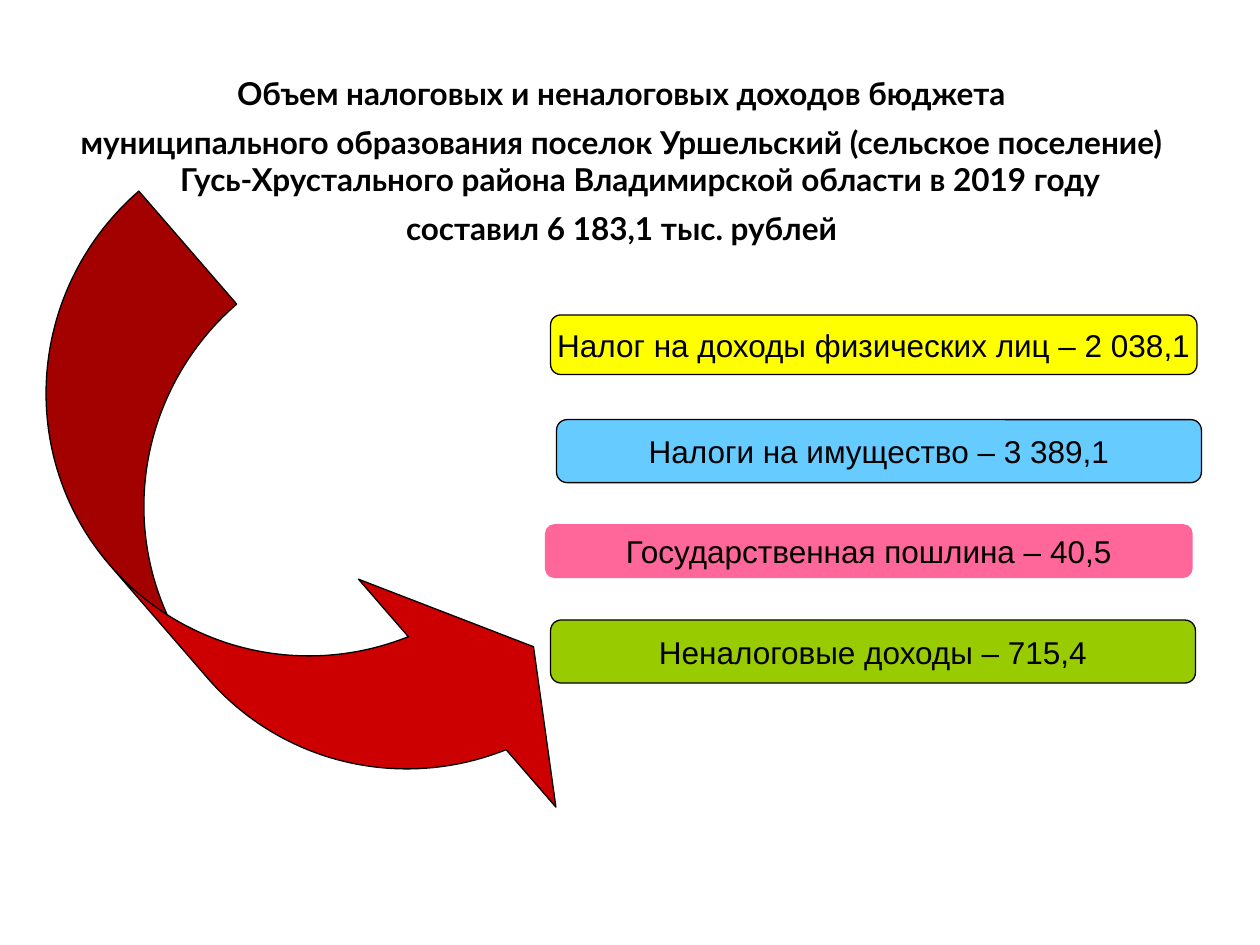
from pptx import Presentation
from pptx.dml.color import RGBColor
from pptx.enum.shapes import MSO_SHAPE
from pptx.enum.text import MSO_ANCHOR, MSO_AUTO_SIZE, PP_ALIGN
from pptx.util import Cm, Pt

CARD = MSO_SHAPE.FLOWCHART_ALTERNATE_PROCESS
ARROW = MSO_SHAPE.CURVED_RIGHT_ARROW
MIDDLE, TOP = MSO_ANCHOR.MIDDLE, MSO_ANCHOR.TOP
CENTER = PP_ALIGN.CENTER
BLACK = "000000"

TITLE = [
    "Объем налоговых и неналоговых доходов бюджета",
    "муниципального образования поселок Уршельский (сельское поселение) "
    "Гусь-Хрустального района Владимирской области в 2019 году",
    "составил 6 183,1 тыс. рублей",
]
# text, fill, line, left, top, width, height (cm)
CARDS = [
    ("Налог на доходы физических лиц – 2 038,1", "FFFF00", BLACK, 11.1, 6.35, 13.03, 1.2),
    ("Налоги на имущество – 3 389,1", "66CCFF", BLACK, 11.22, 8.46, 13, 1.27),
    ("Государственная пошлина – 40,5", "FF6699", "FF6699", 11, 10.58, 13.03, 1.06),
    ("Неналоговые доходы – 715,4", "99CC00", BLACK, 11.1, 12.5, 13, 1.27),
]
ARROW_BOX = (3.05, 3.76, 5.38, 15.19)
ARROW_ADJ = (0.56, 1.13, 0.33)
HANG = Cm(0.75)


def color(code):
    return RGBColor.from_string(code)


def write(par, text, font, bold=False):
    par.alignment = CENTER
    run = par.add_run()
    run.text = text
    run.font.name, run.font.size, run.font.bold = font, Pt(18), bold
    run.font.color.rgb = color(BLACK)


def draw(kind, box, fill, line):
    shape = slide.shapes.add_shape(kind, *map(Cm, box))
    shape.shadow.inherit = False
    shape.fill.solid()
    shape.fill.fore_color.rgb = color(fill)
    shape.line.color.rgb = color(line)
    shape.line.width = Pt(0.75)
    return shape


deck = Presentation()
deck.slide_width, deck.slide_height = Cm(25.4), Cm(19.05)
slide = deck.slides.add_slide(deck.slide_layouts[5])

title = slide.shapes.title
title.left, title.top, title.width, title.height = map(Cm, (0.63, 1.37, 23.8, 3.8))
frame = title.text_frame
frame.auto_size = MSO_AUTO_SIZE.NONE
frame.word_wrap = True
frame.vertical_anchor = TOP
for i, text in enumerate(TITLE):
    par = frame.add_paragraph() if i else frame.paragraphs[0]
    par.space_before = Pt(6 if i else 0)
    props = par._p.get_or_add_pPr()
    props.set("marL", str(HANG))
    props.set("indent", str(-HANG))
    write(par, text, "Lato", True)

for text, fill, line, *box in CARDS:
    frame = draw(CARD, box, fill, line).text_frame
    frame.word_wrap = False
    frame.vertical_anchor = MIDDLE
    write(frame.paragraphs[0], text, "Arial")

arrow = draw(ARROW, ARROW_BOX, "CC0000", BLACK)
arrow.rotation = 319.1
for i, value in enumerate(ARROW_ADJ):
    arrow.adjustments[i] = value

deck.save("out.pptx")
